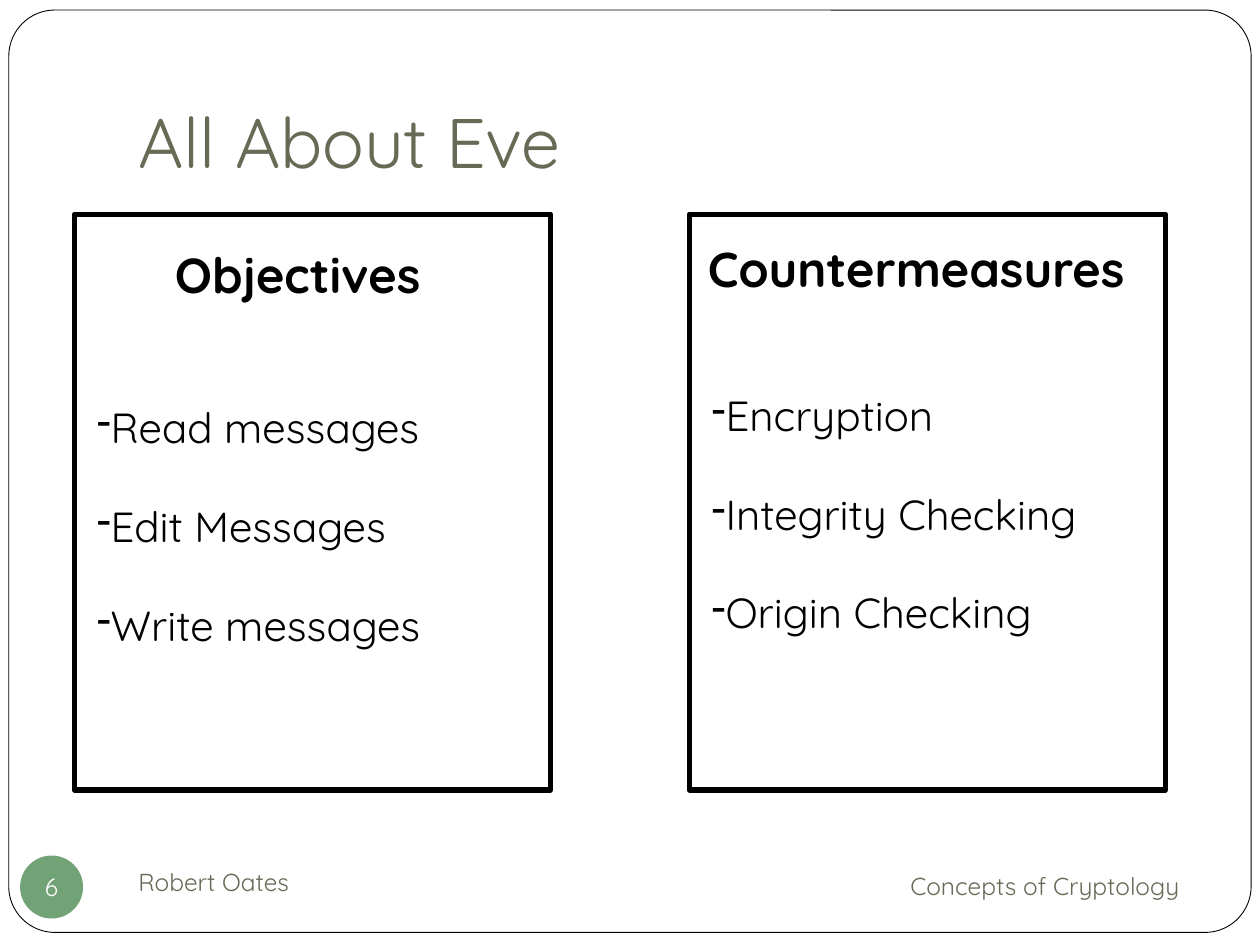
from dataclasses import dataclass
from lxml import etree
from pptx import Presentation
from pptx.dml.color import RGBColor
from pptx.enum import shapes, text
from pptx.oxml import ns
from pptx.util import Inches, Pt

Box = tuple[float, float, float, float]


@dataclass(frozen=True)
class Theme:
    font: str = "Quicksand"
    white: str = "FFFFFF"
    black: str = "000000"
    olive: str = "676A55"
    green: str = "72A376"
    title: int = 40
    head: int = 28
    body: int = 24
    small: int = 14
    gap: float = 27.7


@dataclass(frozen=True)
class Panel:
    left: float
    head: str
    place: Box
    items: list[str]
    top: float


T = Theme()
PANELS = [
    Panel(0.59, "Objectives", (1.29, 1.89, 2.31, 0.57),
          ["Read messages", "Edit Messages", "Write messages"], 3.14),
    Panel(5.47, "Countermeasures", (5.52, 1.84, 3.73, 0.57),
          ["Encryption", "Integrity Checking", "Origin Checking"], 3.04),
]


def write(shape, *lines: str, size: int = T.small, color: str = T.black,
          bold: bool = False, align=text.PP_ALIGN.LEFT,
          anchor=text.MSO_ANCHOR.TOP, wrap: bool = True,
          bullet: str = "", gap: float = 0) -> None:
    frame = shape.text_frame
    frame.word_wrap = wrap
    frame.vertical_anchor = anchor
    for i, line in enumerate(lines):
        para = frame.add_paragraph() if i else frame.paragraphs[0]
        para.alignment = align
        para.space_before = Pt(gap if i else 0)
        run = para.add_run()
        run.text = line
        font = run.font
        font.name, font.size, font.bold = T.font, Pt(size), bold
        font.color.rgb = RGBColor.from_string(color)
        if bullet:
            props = para._p.get_or_add_pPr()
            etree.SubElement(props, ns.qn("a:buFontTx"))
            etree.SubElement(props, ns.qn("a:buChar")).set("char", bullet)


def label(slide, place: Box, *lines: str, **form) -> None:
    write(slide.shapes.add_textbox(*map(Inches, place)), *lines, **form)


def draw(slide, kind, place: Box, fill: str, width: float = 0):
    shape = slide.shapes.add_shape(kind, *map(Inches, place))
    shape.shadow.inherit = False
    shape.fill.solid()
    shape.fill.fore_color.rgb = RGBColor.from_string(fill)
    if width:
        shape.line.color.rgb = RGBColor.from_string(T.black)
        shape.line.width = Pt(width)
    else:
        shape.line.fill.background()
    return shape


def show(slide, panel: Panel) -> None:
    draw(slide, shapes.MSO_SHAPE.RECTANGLE,
         (panel.left, 1.7, 3.78, 4.57), T.white, 3)
    label(slide, panel.place, panel.head, size=T.head, bold=True, wrap=False)
    label(slide, (panel.left + 0.08, panel.top, 3.54, 2.1), *panel.items,
          size=T.body, bullet="-", gap=T.gap)


def main() -> None:
    deck = Presentation()
    deck.slide_width, deck.slide_height = Inches(10), Inches(7.5)
    slide = deck.slides.add_slide(deck.slide_layouts[5])

    title = slide.shapes.title
    title.left, title.top, title.width, title.height = map(
        Inches, (1, 0.3, 8.5, 1.25))
    title.text_frame.margin_bottom = Inches(0.1)
    write(title, "All About Eve", size=T.title, color=T.olive,
          anchor=text.MSO_ANCHOR.BOTTOM)

    border = draw(slide, shapes.MSO_SHAPE.ROUNDED_RECTANGLE,
                  (0.07, 0.08, 9.86, 7.32), T.white, 0.5)
    border.adjustments[0] = 0.05
    title._element.addprevious(border._element)

    mid = text.MSO_ANCHOR.MIDDLE
    label(slide, (6.75, 6.77, 2.71, 0.52), "Concepts of Cryptology",
          color=T.olive, align=text.PP_ALIGN.RIGHT, anchor=mid)
    label(slide, (1, 6.75, 4.33, 0.5), "Robert Oates",
          color=T.olive, anchor=mid)

    badge = draw(slide, shapes.MSO_SHAPE.OVAL, (0.16, 6.79, 0.5, 0.5), T.green)
    inner = badge.text_frame
    inner.margin_left = inner.margin_right = 0
    inner.margin_top = inner.margin_bottom = 0
    write(badge, "6", color=T.white, align=text.PP_ALIGN.CENTER,
          anchor=mid, wrap=False)

    for panel in PANELS:
        show(slide, panel)
    deck.save("out.pptx")


if __name__ == "__main__":
    main()
